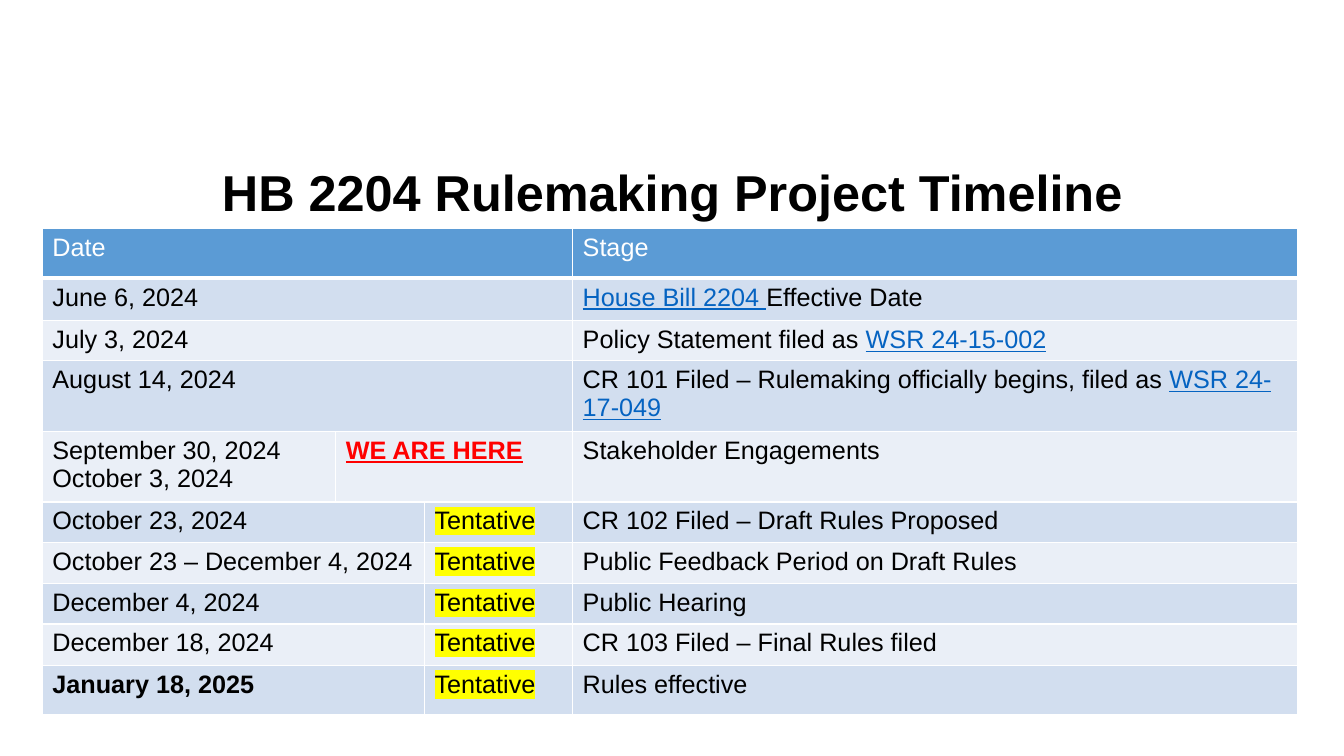
"""Build the HB 2204 rulemaking timeline slide."""
from lxml.etree import SubElement
from pptx import Presentation
from pptx.dml.color import RGBColor
from pptx.enum.text import MSO_ANCHOR, PP_ALIGN
from pptx.oxml import parse_xml
from pptx.oxml.ns import nsdecls, qn
from pptx.util import Inches, Pt

TITLE = "HB 2204 Rulemaking Project Timeline"
HUES = {"text": "000000", "head": "FFFFFF", "link": "0563C1", "here": "FF0000",
        "mark": "FFFF00", "line": "FFFFFF", "top": "5B9BD5",
        "odd": "D2DEEF", "even": "EAEFF7"}
STYLES = {"plain": {}, "bold": {"bold": True}, "head": {"hue": "head"},
          "link": {"hue": "link", "under": True},
          "here": {"hue": "here", "bold": True, "under": True},
          "mark": {"mark": True}}
TAGS = {"WE ARE HERE": (1, "here"), "Tentative": (2, "mark")}
ROWS = [
    ([("Date", "head")], None, [("Stage", "head")]),
    (["June 6, 2024"], None,
     [("House Bill 2204 ", "link"), "Effective Date"]),
    (["July 3, 2024"], None,
     ["Policy Statement filed as ", ("WSR 24-15-002", "link")]),
    (["August 14, 2024"], None,
     ["CR 101 Filed – Rulemaking officially begins, filed as ",
      ("WSR 24-17-049", "link")]),
    (["September 30, 2024\nOctober 3, 2024"], "WE ARE HERE",
     ["Stakeholder Engagements"]),
    (["October 23, 2024"], "Tentative", ["CR 102 Filed – Draft Rules Proposed"]),
    (["October 23 – December 4, 2024"], "Tentative",
     ["Public Feedback Period on Draft Rules"]),
    (["December 4, 2024"], "Tentative", ["Public Hearing"]),
    (["December 18, 2024"], "Tentative", ["CR 103 Filed – Final Rules filed"]),
    ([("January 18, 2025", "bold")], "Tentative", ["Rules effective"]),
]
WIDTHS = [2.91, 0.88, 1.47, 7.19]
HEIGHTS = [0.49, 0.42, 0.39, 0.4, 0.66, 0.39, 0.41, 0.38, 0.41, 0.49]
STAGE = len(WIDTHS) - 1


def add_run(para, text, size, hue="text", bold=False, under=False, mark=False):
    run = para.add_run()
    run.text = text
    font = run.font
    font.size, font.bold, font.underline = Pt(size), bold, under
    font.color.rgb = RGBColor.from_string(HUES[hue])
    if mark:
        glow = SubElement(run._r.rPr, qn("a:highlight"))
        SubElement(glow, qn("a:srgbClr")).set("val", HUES["mark"])
    font.name = "Arial"


def write(cell, runs):
    frame = cell.text_frame
    para = frame.paragraphs[0]
    for run in runs:
        text, style = (run, "plain") if isinstance(run, str) else run
        for i, line in enumerate(text.split("\n")):
            if i:
                para = frame.add_paragraph()
            add_run(para, line, 18, **STYLES[style])


def paint(cell, row):
    props = cell._tc.get_or_add_tcPr()
    for side in "LRTB":
        width = Pt(3 if row == 0 and side == "B" else 1)
        props.append(parse_xml(
            f'<a:ln{side} {nsdecls("a")} w="{width}"><a:solidFill>'
            f'<a:srgbClr val="{HUES["line"]}"/></a:solidFill></a:ln{side}>'))
    tone = "top" if row == 0 else "odd" if row % 2 else "even"
    cell.fill.solid()
    cell.fill.fore_color.rgb = RGBColor.from_string(HUES[tone])


def add_title(slide):
    box = slide.shapes.add_textbox(
        Inches(0.92), Inches(1.6), Inches(11.5), Inches(0.67))
    frame = box.text_frame
    frame.word_wrap = True
    frame.vertical_anchor = MSO_ANCHOR.MIDDLE
    para = frame.paragraphs[0]
    para.alignment = PP_ALIGN.CENTER
    para.line_spacing = 0.9
    add_run(para, TITLE, 36, bold=True)


def add_grid(slide):
    grid = slide.shapes.add_table(
        len(ROWS), len(WIDTHS), Inches(0.42), Inches(2.27),
        Inches(sum(WIDTHS)), Inches(sum(HEIGHTS))).table
    for col, width in zip(grid.columns, WIDTHS):
        col.width = Inches(width)
    for r, (dates, tag, stage) in enumerate(ROWS):
        grid.rows[r].height = Inches(HEIGHTS[r])
        for c in range(len(WIDTHS)):
            paint(grid.cell(r, c), r)
        start, style = TAGS.get(tag, (STAGE, "plain"))
        for first, last in ((0, start - 1), (start, STAGE - 1)):
            if first < last:
                grid.cell(r, first).merge(grid.cell(r, last))
        write(grid.cell(r, 0), dates)
        if tag:
            write(grid.cell(r, start), [(tag, style)])
        write(grid.cell(r, STAGE), stage)


def main():
    deck = Presentation()
    deck.slide_width, deck.slide_height = Inches(13.33), Inches(7.5)
    slide = deck.slides.add_slide(deck.slide_layouts[6])
    add_title(slide)
    add_grid(slide)
    deck.save("out.pptx")


if __name__ == "__main__":
    main()
